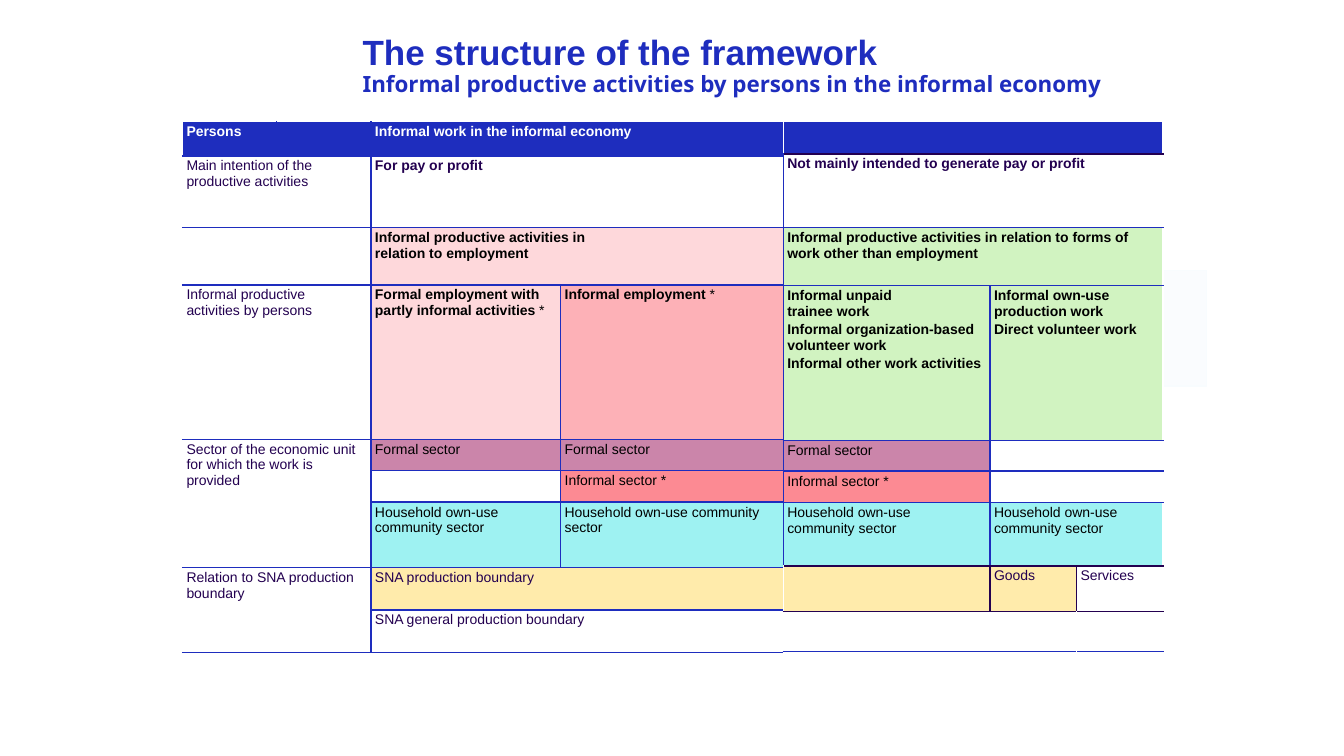
from lxml import etree
from pptx import Presentation
from pptx import util as u
from pptx.dml.color import RGBColor
from pptx.enum import shapes, text
from pptx.oxml import ns

COLOURS = {
    "blue": "1E2DBE", "ink": "230050", "black": "000000", "white": "FFFFFF",
    "pale": "F8FCFE", "blush": "FED8DB", "pink": "FDB1B7", "red": "FC8A93",
    "mauve": "CB85AA", "aqua": "9EF2F2", "green": "D1F3C1", "sand": "FFEBAB",
}
HOUSEHOLD = "Household own-use community sector"


def rgb(name):
    return RGBColor.from_string(COLOURS[name])


def write(para, words, size=10, font="Arial", colour="black", bold=False):
    """Add text to a paragraph, turning newlines into line breaks."""
    for number, line in enumerate(words.split("\n")):
        if number:
            para.add_line_break()
        span = para.add_run()
        span.text = line
        span.font.size = u.Pt(size)
        span.font.name = font
        span.font.bold = bold
        span.font.color.rgb = rgb(colour)


def add_title(page):
    box = page.shapes.add_textbox(u.Cm(9.14), u.Cm(0.89), u.Cm(24), u.Cm(2))
    frame = box.text_frame
    frame.word_wrap = True
    frame.vertical_anchor = text.MSO_ANCHOR.TOP
    frame.margin_left = frame.margin_right = 0
    frame.margin_top = frame.margin_bottom = 0
    para = frame.paragraphs[0]
    para.line_spacing = 0.9
    write(para, "The structure of the framework", size=25, colour="blue", bold=True)
    para.add_line_break()
    write(para, "Informal productive activities by persons in the informal economy",
          size=16, font="Noto Sans", colour="blue", bold=True)


def add_pale_panel(page):
    panel = page.shapes.add_shape(shapes.MSO_SHAPE.RECTANGLE, u.Cm(27.56), u.Cm(6.81),
                                  u.Cm(2.84), u.Cm(2.92))
    panel.shadow.inherit = False
    panel.fill.solid()
    panel.fill.fore_color.rgb = rgb("pale")
    colour = panel.fill._xPr.find(".//" + ns.qn("a:srgbClr"))
    etree.SubElement(colour, ns.qn("a:alpha"), val="70000")
    panel.line.color.rgb = rgb("pale")
    panel.line.width = u.Pt(1)


def add_borders(cell, sides, dark):
    """Draw the sides named by letters (L, R, T, B); those in dark use ink."""
    props = cell._tc.get_or_add_tcPr()
    drawn = [side for side in "LRTB" if side in sides]
    for place, side in enumerate(drawn):
        line = etree.Element(ns.qn("a:ln" + side), w=str(u.Pt(1)))
        fill = etree.SubElement(line, ns.qn("a:solidFill"))
        name = "ink" if side in dark else "blue"
        etree.SubElement(fill, ns.qn("a:srgbClr"), val=COLOURS[name])
        props.insert(place, line)


def fill_cell(cell, lines=(), fill=None, colour="black", bold=False, star=False,
              sides="LRTB", dark=""):
    cell.margin_left = cell.margin_right = u.Cm(0.1)
    cell.margin_top = u.Cm(0.06)
    cell.margin_bottom = u.Cm(0.02)
    if fill:
        cell.fill.solid()
        cell.fill.fore_color.rgb = rgb(fill)
    else:
        cell.fill.background()
    frame = cell.text_frame
    for number, words in enumerate(lines):
        para = frame.add_paragraph() if number else frame.paragraphs[0]
        para.space_before = u.Pt(1 if number else 0)
        para.space_after = u.Pt(1)
        write(para, words, colour=colour, bold=bold)
        if star:
            write(para, " *", colour=colour)
    if not lines:
        frame.paragraphs[0]._p.get_or_add_endParaRPr().set("sz", "1000")
    add_borders(cell, sides, dark)


def add_grid(page, left, columns, rows, cells):
    """Build a table from (row, column, row span, column span, format) entries."""
    frame = page.shapes.add_table(len(rows), len(columns), u.Cm(left), u.Cm(3.07),
                                  u.Cm(sum(columns)), u.Cm(sum(rows)))
    table = frame.table
    table.first_row = table.horz_banding = False
    for column, width in zip(table.columns, columns):
        column.width = u.Cm(width)
    for row, height in zip(table.rows, rows):
        row.height = u.Cm(height)
    for row, column, down, across, style in cells:
        cell = table.cell(row, column)
        if down > 1 or across > 1:
            cell.merge(table.cell(row + down - 1, column + across - 1))
        fill_cell(cell, **style)


def label(*lines, **style):
    return dict(lines=lines, **style)


def heading(words):
    return label(words, colour="ink", sides="RTB")


def employment_cells():
    header = dict(fill="blue", colour="white", bold=True)
    formal = label("Formal sector", fill="mauve")
    household = label(HOUSEHOLD, fill="aqua")
    return [
        (0, 0, 1, 1, label("Persons", sides="RB", **header)),
        (0, 1, 1, 1, label(sides="LRB", **header)),
        (0, 2, 1, 2, label("Informal work in the informal economy", sides="LB", **header)),
        (1, 0, 1, 2, heading("Main intention of the productive activities")),
        (1, 2, 1, 2, label("For pay or profit", colour="ink", bold=True)),
        (2, 0, 1, 2, label(sides="RTB")),
        (2, 2, 1, 2, label("Informal productive activities in\nrelation to employment",
                           fill="blush", bold=True)),
        (3, 0, 1, 2, heading("Informal productive\nactivities by persons")),
        (3, 2, 1, 1, label("Formal employment with partly informal activities",
                           fill="blush", bold=True, star=True)),
        (3, 3, 1, 1, label("Informal employment", fill="pink", bold=True, star=True)),
        (4, 0, 3, 2, heading("Sector of the economic unit for which the work is provided")),
        (4, 2, 1, 1, formal),
        (4, 3, 1, 1, formal),
        (5, 2, 1, 1, label()),
        (5, 3, 1, 1, label("Informal sector", fill="red", star=True)),
        (6, 2, 1, 1, household),
        (6, 3, 1, 1, household),
        (7, 0, 2, 2, heading("Relation to SNA production boundary")),
        (7, 2, 1, 2, label("SNA production boundary", fill="sand", colour="ink")),
        (8, 2, 1, 2, label("SNA general production boundary", colour="ink", sides="LTB")),
    ]


def other_work_cells():
    edge = dict(sides="LTB")
    work = dict(fill="green", bold=True)
    return [
        (0, 0, 1, 3, label(fill="blue", sides="")),
        (1, 0, 1, 3, label("Not mainly intended to generate pay or profit",
                           colour="ink", bold=True, dark="T", **edge)),
        (2, 0, 1, 3, label("Informal productive activities in relation to forms of "
                           "work other than employment", **work, **edge)),
        (3, 0, 1, 1, label("Informal unpaid\ntrainee work",
                           "Informal organization-based volunteer work",
                           "Informal other work activities", **work)),
        (3, 1, 1, 2, label("Informal own-use production work",
                           "Direct volunteer work", **work, **edge)),
        (4, 0, 1, 1, label("Formal sector", fill="mauve")),
        (4, 1, 1, 2, label(**edge)),
        (5, 0, 1, 1, label("Informal sector", fill="red", star=True)),
        (5, 1, 1, 2, label(**edge)),
        (6, 0, 1, 1, label("Household own-use\ncommunity sector", fill="aqua", dark="B")),
        (6, 1, 1, 2, label(HOUSEHOLD, fill="aqua", dark="B", **edge)),
        (7, 0, 1, 1, label(fill="sand", sides="RTB", dark="RTB")),
        (7, 1, 1, 1, label("Goods", fill="sand", colour="ink", dark="LRTB")),
        (7, 2, 1, 1, label("Services", colour="ink", dark="LTB", **edge)),
        (8, 0, 1, 2, label(sides="TB", dark="T")),
        (8, 2, 1, 1, label(sides="TB", dark="T")),
    ]


def main():
    deck = Presentation()
    deck.slide_width = u.Cm(33.87)
    deck.slide_height = u.Cm(19.05)
    page = deck.slides.add_slide(deck.slide_layouts[6])
    add_title(page)
    add_pale_panel(page)
    add_grid(page, 4.6, [2.36, 2.39, 4.78, 5.61],
             [0.86, 1.8, 1.45, 3.89, 0.79, 0.79, 1.65, 1.07, 1.07], employment_cells())
    add_grid(page, 19.74, [5.21, 2.18, 2.18],
             [0.81, 1.85, 1.47, 3.91, 0.76, 0.79, 1.6, 1.14, 1.02], other_work_cells())
    deck.save("out.pptx")


if __name__ == "__main__":
    main()
